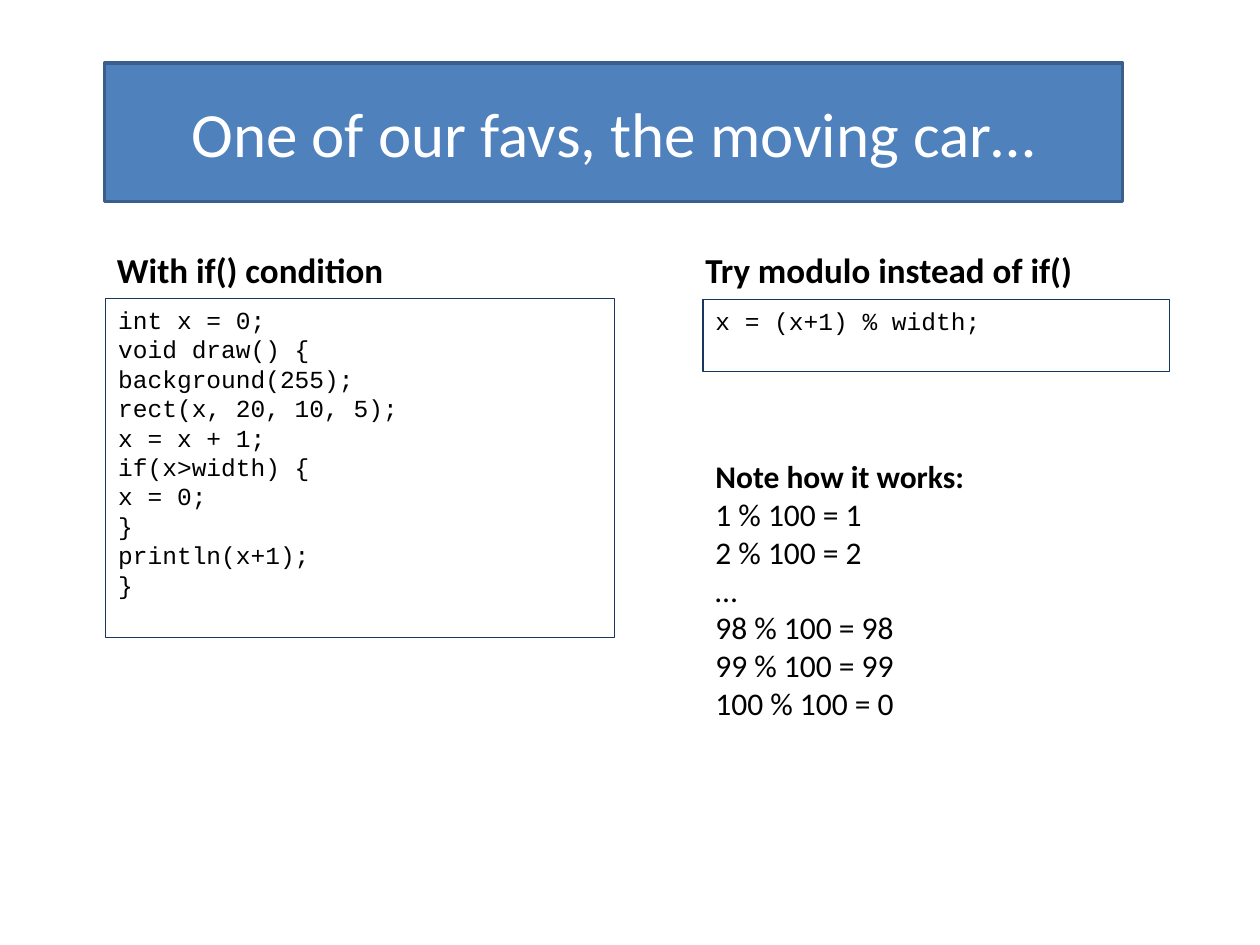
from pptx import Presentation, util as u
from pptx.dml.color import RGBColor
from pptx.enum import shapes, text

COLORS = {"banner": "4F81BD", "banner_edge": "3A5F8C", "code_edge": "17375E",
          "ink": "000000", "light": "FFFFFF"}
WIDTH, HEIGHT = u.Inches(10), u.Inches(7.5)
COLS, ROWS = 100, 75  # grid of the slide

IF_CODE = """int x = 0;
void draw() {
background(255);
rect(x, 20, 10, 5);
x = x + 1;
if(x>width) {
x = 0;
}
println(x+1);
}""".split("\n")
MODULO_CODE = ["x = (x+1) % width;"]
MODULO_NOTES = ["Note how it works:", "1 % 100 = 1", "2 % 100 = 2", "…",
                "98 % 100 = 98", "99 % 100 = 99", "100 % 100 = 0"]


def color(name):
    return RGBColor.from_string(COLORS[name])


def place(box):
    """Turn (column, row, columns, rows) into slide lengths."""
    col, row, cols, rows = box
    return (int(WIDTH * col / COLS), int(HEIGHT * row / ROWS),
            int(WIDTH * cols / COLS), int(HEIGHT * rows / ROWS))


def write(frame, lines, size, font="Calibri", ink="ink", bold_lines=0,
          align=text.PP_ALIGN.LEFT, anchor=text.MSO_ANCHOR.TOP):
    frame.word_wrap = True
    frame.vertical_anchor = anchor
    for i, line in enumerate(lines):
        paragraph = frame.paragraphs[0] if i == 0 else frame.add_paragraph()
        paragraph.text = line
        paragraph.alignment = align
        paragraph.font.name = font
        paragraph.font.size = u.Pt(size)
        paragraph.font.bold = i < bold_lines
        paragraph.font.color.rgb = color(ink)


def add_panel(slide, box, edge, weight, fill=None):
    panel = slide.shapes.add_shape(shapes.MSO_SHAPE.RECTANGLE, *place(box))
    panel.shadow.inherit = False
    if fill:
        panel.fill.solid()
        panel.fill.fore_color.rgb = color(fill)
    else:
        panel.fill.background()
    panel.line.color.rgb = color(edge)
    panel.line.width = u.Pt(weight)
    return panel.text_frame


def add_banner(slide, box, title):
    frame = add_panel(slide, box, "banner_edge", 2, "banner")
    write(frame, [title], 36, ink="light", align=text.PP_ALIGN.CENTER,
          anchor=text.MSO_ANCHOR.MIDDLE)


def add_heading(slide, box, heading):
    frame = slide.shapes.add_textbox(*place(box)).text_frame
    write(frame, [heading], 20, bold_lines=1)


def add_code(slide, box, code):
    write(add_panel(slide, box, "code_edge", 0.75), code, 14, "Courier New")


def add_notes(slide, box, notes):
    frame = slide.shapes.add_textbox(*place(box)).text_frame
    write(frame, notes, 18, bold_lines=1)


def main():
    deck = Presentation()
    deck.slide_width, deck.slide_height = WIDTH, HEIGHT
    slide = deck.slides.add_slide(deck.slide_layouts[6])

    # Title
    add_banner(slide, (8.3, 5, 80.8, 11), "One of our favs, the moving car…")

    # Left column: condition
    add_heading(slide, (8.3, 19.2, 36.7, 4.4), "With if() condition")
    add_code(slide, (8.4, 23.7, 40.4, 26.9), IF_CODE)

    # Right column: modulo
    add_heading(slide, (55, 19.2, 36.7, 4.4), "Try modulo instead of if()")
    add_code(slide, (55.8, 23.8, 37, 5.7), MODULO_CODE)
    add_notes(slide, (55.8, 35.8, 37, 25.2), MODULO_NOTES)

    deck.save("out.pptx")


if __name__ == "__main__":
    main()
